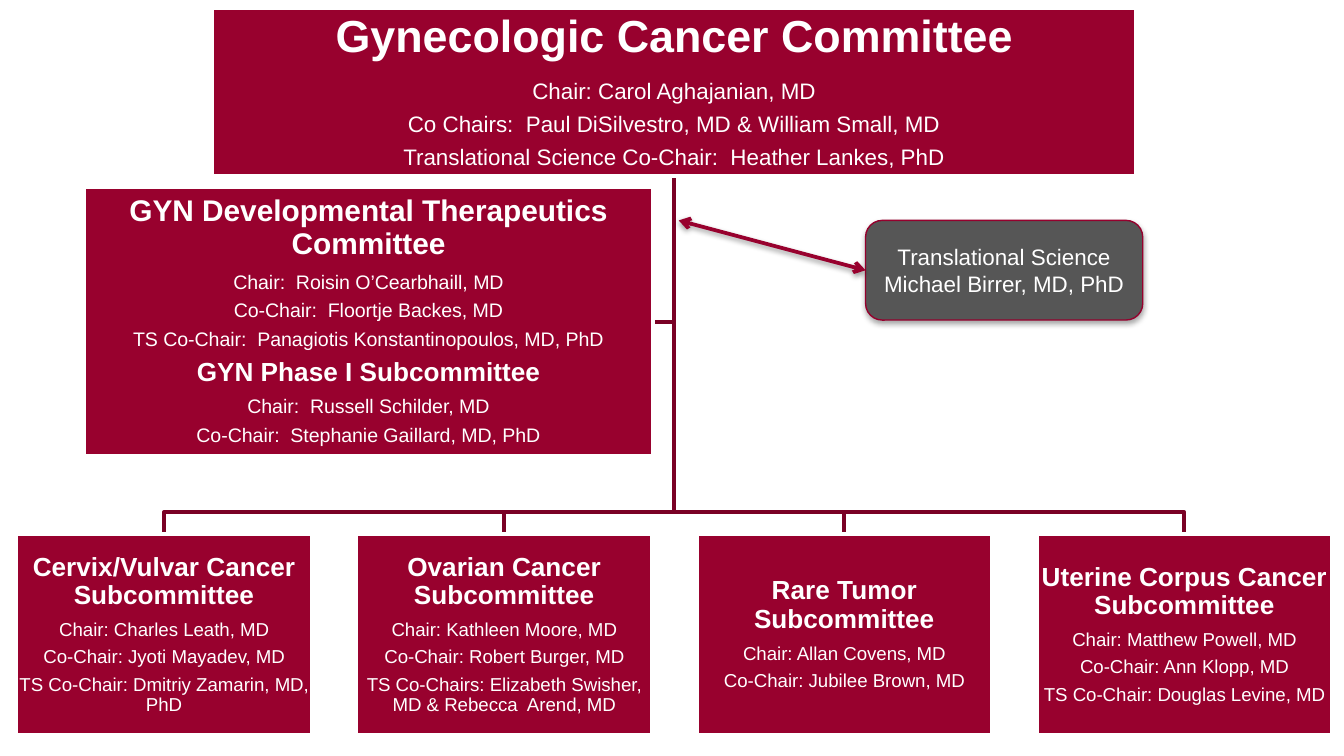
from lxml import etree
from pptx import Presentation
from pptx.dml.color import RGBColor
from pptx.enum import shapes, text
from pptx.oxml import ns
from pptx.util import Pt

CRIMSON = RGBColor(0x98, 0x01, 0x2E)
DARK_CRIMSON = RGBColor(0x7A, 0x01, 0x25)
OUTLINE = RGBColor(0x96, 0x00, 0x2D)
GREY = RGBColor(0x56, 0x56, 0x56)
WHITE = RGBColor(0xFF, 0xFF, 0xFF)


class Chart:
    font = "Arial"
    line_width = 2

    def __init__(self, page):
        self.page = page

    def branch(self, points):
        """Draw an open elbow line through the points."""
        start, *rest = [(Pt(x), Pt(y)) for x, y in points]
        builder = self.page.shapes.build_freeform(*start)
        builder.add_line_segments(rest, close=False)
        line = builder.convert_to_shape()
        line.shadow.inherit = False
        line.fill.background()
        line.line.color.rgb = DARK_CRIMSON
        line.line.width = Pt(self.line_width)

    def block(self, kind, frame, fill, outline, width):
        box = self.page.shapes.add_shape(kind, *map(Pt, frame))
        box.shadow.inherit = False
        box.fill.solid()
        box.fill.fore_color.rgb = fill
        box.line.color.rgb = outline
        box.line.width = Pt(width)
        box.text_frame.word_wrap = True
        box.text_frame.vertical_anchor = text.MSO_ANCHOR.MIDDLE
        return box

    def fill_para(self, para, words, size, bold=False):
        para.text = words
        para.alignment = text.PP_ALIGN.CENTER
        for span in para.runs:
            span.font.name = self.font
            span.font.size = Pt(size)
            span.font.bold = bold
            span.font.color.rgb = WHITE

    def committee(self, frame, sections, member_size, inset=0.7):
        """Add a box of sections, each a (title, title size, members) triple."""
        box = self.block(shapes.MSO_SHAPE.RECTANGLE, frame, CRIMSON, WHITE, self.line_width)
        body = box.text_frame
        body.margin_left = body.margin_right = Pt(inset)
        body.margin_top = body.margin_bottom = Pt(inset)
        rows = []
        for title, size, members in sections:
            rows.append((title, size, True))
            rows += [(member, member_size, False) for member in members]
        for index, (words, size, bold) in enumerate(rows):
            para = body.add_paragraph() if index else body.paragraphs[0]
            self.fill_para(para, words, size, bold)
            para.line_spacing = 0.9
            para.space_after = Pt(round(size * 0.39, 1))

    def partner(self, frame, rows):
        box = self.block(shapes.MSO_SHAPE.ROUNDED_RECTANGLE, frame, GREY, OUTLINE, 0.75)
        box.text_frame.text = "\n".join(rows)
        for para, words in zip(box.text_frame.paragraphs, rows):
            self.fill_para(para, words, 12)
        self.cast_shadow(box, 1.8, 35)
        return box

    def double_arrow(self, box, end):
        arrow = self.page.shapes.add_connector(
            shapes.MSO_CONNECTOR.STRAIGHT, 0, 0, *map(Pt, end))
        arrow.begin_connect(box, 1)
        arrow.line.color.rgb = CRIMSON
        arrow.line.width = Pt(self.line_width)
        stroke = arrow._element.spPr.find(ns.qn("a:ln"))
        for tag in ("a:headEnd", "a:tailEnd"):
            etree.SubElement(stroke, ns.qn(tag), type="arrow")
        self.cast_shadow(arrow, 1.6, 38)

    def cast_shadow(self, item, distance, opacity):
        properties = item._element.spPr
        effects = properties.find(ns.qn("a:effectLst"))
        if effects is None:
            effects = etree.SubElement(properties, ns.qn("a:effectLst"))
        shadow = etree.SubElement(
            effects, ns.qn("a:outerShdw"), blurRad=str(int(Pt(3.1))),
            dist=str(int(Pt(distance))), dir="5400000", rotWithShape="0")
        color = etree.SubElement(shadow, ns.qn("a:srgbClr"), val="000000")
        etree.SubElement(color, ns.qn("a:alpha"), val=str(opacity * 1000))


SUBCOMMITTEES = [
    ("Cervix/Vulvar Cancer Subcommittee",
     ["Chair: Charles Leath, MD", "Co-Chair: Jyoti Mayadev, MD",
      "TS Co-Chair: Dmitriy Zamarin, MD, PhD"]),
    ("Ovarian Cancer Subcommittee",
     ["Chair: Kathleen Moore, MD", "Co-Chair: Robert Burger, MD",
      "TS Co-Chairs: Elizabeth Swisher, MD & Rebecca  Arend, MD"]),
    ("Rare Tumor Subcommittee",
     ["Chair: Allan Covens, MD", "Co-Chair: Jubilee Brown, MD"]),
    ("Uterine Corpus Cancer Subcommittee",
     ["Chair: Matthew Powell, MD", "Co-Chair: Ann Klopp, MD",
      "TS Co-Chair: Douglas Levine, MD"]),
]
LEFT, PITCH, WIDTH, HEIGHT = 8.8, 182.2, 158.2, 108
TRUNK, TRUNK_TOP, BUS, ROW_TOP = 361.2, 94.4, 274.4, 286


def main():
    deck = Presentation()
    deck.slide_width, deck.slide_height = Pt(720), Pt(405)
    chart = Chart(deck.slides.add_slide(deck.slide_layouts[6]))

    chart.branch([(TRUNK, TRUNK_TOP), (TRUNK, 172.4), (349.8, 172.4)])
    lefts = [LEFT + PITCH * index for index in range(len(SUBCOMMITTEES))]
    for left in lefts:
        middle = left + WIDTH / 2
        chart.branch([(TRUNK, TRUNK_TOP), (TRUNK, BUS), (middle, BUS), (middle, ROW_TOP)])

    chart.committee((113.6, 4.4, 495.2, 90), [
        ("Gynecologic Cancer Committee", 24,
         ["Chair: Carol Aghajanian, MD",
          "Co Chairs:  Paul DiSilvestro, MD & William Small, MD",
          "Translational Science Co-Chair:  Heather Lankes, PhD"]),
    ], 12, inset=1.2)
    for left, (title, members) in zip(lefts, SUBCOMMITTEES):
        chart.committee((left, ROW_TOP, WIDTH, HEIGHT), [(title, 14, members)], 10)
    chart.committee((45.2, 100.3, 304.6, 144), [
        ("GYN Developmental Therapeutics Committee", 16,
         ["Chair:  Roisin O’Cearbhaill, MD", "Co-Chair:  Floortje Backes, MD",
          "TS Co-Chair:  Panagiotis Konstantinopoulos, MD, PhD"]),
        ("GYN Phase I Subcommittee", 14,
         ["Chair:  Russell Schilder, MD", "Co-Chair:  Stephanie Gaillard, MD, PhD"]),
    ], 10.5)

    science = chart.partner((463.7, 118.1, 148.5, 53.4),
                            ["Translational Science", "Michael Birrer, MD, PhD"])
    chart.double_arrow(science, (363.6, 118.1))
    deck.save("out.pptx")


if __name__ == "__main__":
    main()
